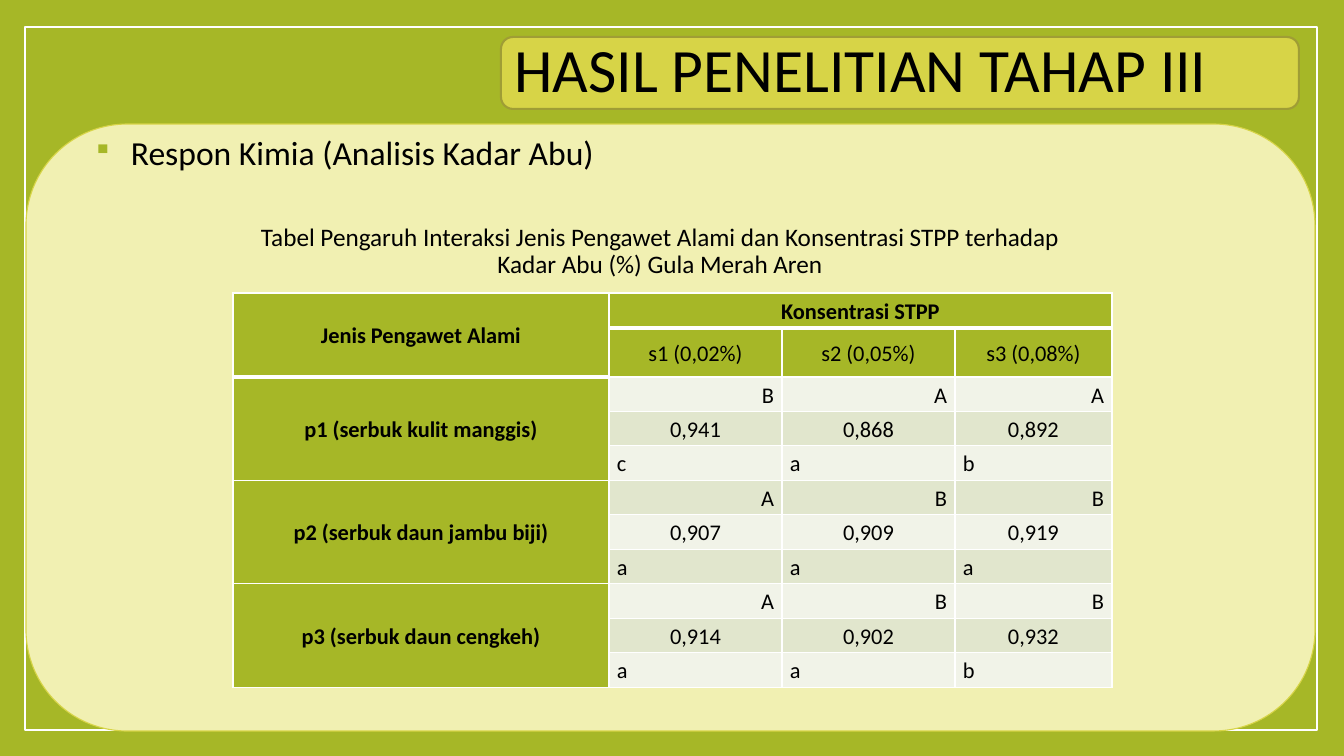
from lxml import etree
from pptx import Presentation
from pptx.dml.color import RGBColor
from pptx.enum.shapes import MSO_SHAPE
from pptx.enum.text import MSO_ANCHOR, PP_ALIGN
from pptx.oxml.ns import qn
from pptx.util import Pt

RECT, ROUND = MSO_SHAPE.RECTANGLE, MSO_SHAPE.ROUNDED_RECTANGLE
LEFT, MID, RIGHT = PP_ALIGN.LEFT, PP_ALIGN.CENTER, PP_ALIGN.RIGHT
JUST = PP_ALIGN.JUSTIFY
CENTRE = MSO_ANCHOR.MIDDLE
HUES = {
    "green": "A6B727", "cream": "F1F0B2", "gold": "D7D447", "olive": "9F9D35",
    "white": "FFFFFF", "black": "000000", "pale": "F1F3E8", "sage": "E1E6CD",
}
HEADS = ["s1 (0,02%)", "s2 (0,05%)", "s3 (0,08%)"]
GROUPS = [
    ("p1 (serbuk kulit manggis)", ["BAA", ["0,941", "0,868", "0,892"], "cab"]),
    ("p2 (serbuk daun jambu biji)", ["ABB", ["0,907", "0,909", "0,919"], "aaa"]),
    ("p3 (serbuk daun cengkeh)", ["ABB", ["0,914", "0,902", "0,932"], "aab"]),
]
COLS = [376, 173, 173, 157]
ROWS = [35, 49] + [35 - i % 2 for i in range(9)]


def px(n):
    return round(n * 914400 / 100.8)


def hue(name):
    return RGBColor.from_string(HUES[name])


class Deck:
    """Draws styled elements on the current slide."""

    def __init__(self, font):
        self.font = font
        self.prs = Presentation()
        self.prs.slide_width, self.prs.slide_height = px(1344), px(756)

    def page(self, fill):
        self.slide = self.prs.slides.add_slide(self.prs.slide_layouts[6])
        back = self.slide.background.fill
        back.solid()
        back.fore_color.rgb = hue(fill)

    def text(self, frame, words, size, align=LEFT, bold=False, space=0.9):
        para = frame.paragraphs[0]
        para.alignment, para.line_spacing = align, space
        run = para.add_run()
        run.text = words
        font = run.font
        font.name, font.size, font.bold = self.font, Pt(size), bold
        font.color.rgb = hue("black")
        return para

    def shape(self, kind, box, fill, line, width):
        item = self.slide.shapes.add_shape(kind, *map(px, box))
        item.shadow.inherit = False
        item.fill.solid()
        item.fill.fore_color.rgb = hue(fill)
        item.line.color.rgb = hue(line)
        item.line.width = Pt(width)
        return item

    def label(self, box, words, size, align=LEFT):
        frame = self.slide.shapes.add_textbox(*map(px, box)).text_frame
        frame.word_wrap = True
        return self.text(frame, words, size, align)

    def bullet(self, para, mark, color, scale, indent):
        props = para._p.get_or_add_pPr()
        props.set("marL", str(px(indent)))
        props.set("indent", str(-px(indent)))
        tint = etree.SubElement(props, qn("a:buClr"))
        etree.SubElement(tint, qn("a:srgbClr"), val=HUES[color])
        etree.SubElement(props, qn("a:buSzPct"), val=str(scale * 1000))
        etree.SubElement(props, qn("a:buChar"), char=mark)

    def table(self, left, top, cols, rows):
        box = map(px, (left, top, sum(cols), sum(rows)))
        grid = self.slide.shapes.add_table(len(rows), len(cols), *box).table
        for col, width in zip(grid.columns, cols):
            col.width = px(width)
        for row, height in zip(grid.rows, rows):
            row.height = px(height)
        return grid

    def cell(self, cell, fill, thick):
        props = cell._tc.get_or_add_tcPr()
        for side in "LRTB":
            width = Pt(3 if side in thick else 1)
            edge = etree.SubElement(props, qn("a:ln" + side), w=str(width))
            paint = etree.SubElement(edge, qn("a:solidFill"))
            etree.SubElement(paint, qn("a:srgbClr"), val=HUES["white"])
        cell.fill.solid()
        cell.fill.fore_color.rgb = hue(fill)
        cell.margin_left = cell.margin_right = px(8)
        cell.margin_top = cell.margin_bottom = 0
        cell.vertical_anchor = CENTRE

    def entry(self, cell, words, align=MID, bold=False):
        self.text(cell.text_frame, words, 16, align, bold, 1.07)


def main():
    deck = Deck("Calibri")
    deck.page("green")
    deck.shape(RECT, (25, 27, 1292, 703), "green", "white", 1)
    deck.shape(ROUND, (26, 124, 1289, 607), "cream", "gold", 0.79)
    topic = deck.label((83, 131, 530, 41), "Respon Kimia (Analisis Kadar Abu)", 24)
    deck.bullet(topic, "▪", "green", 80, 38)
    deck.label((233, 220, 854, 73),
               "Tabel Pengaruh Interaksi Jenis Pengawet Alami dan Konsentrasi "
               "STPP terhadap Kadar Abu (%) Gula Merah Aren", 18, MID)

    grid = deck.table(233, 293, COLS, ROWS)
    for r in range(len(ROWS)):
        for c in range(len(COLS)):
            head = r < 2 or c == 0
            band = "sage" if r % 2 else "pale"
            split = 1 if c else 2
            thick = "B" if r == 0 or r == split - 1 else "T" if r == split else ""
            deck.cell(grid.cell(r, c), "green" if head else band, thick)

    grid.cell(0, 0).merge(grid.cell(1, 0))
    grid.cell(0, 1).merge(grid.cell(0, 3))
    deck.entry(grid.cell(0, 0), "Jenis Pengawet Alami", bold=True)
    deck.entry(grid.cell(0, 1), "Konsentrasi STPP", bold=True)
    for c, words in enumerate(HEADS, 1):
        deck.entry(grid.cell(1, c), words)
    for g, (name, lines) in enumerate(GROUPS):
        top = 2 + 3 * g
        grid.cell(top, 0).merge(grid.cell(top + 2, 0))
        deck.entry(grid.cell(top, 0), name, bold=True)
        for r, (line, align) in enumerate(zip(lines, (RIGHT, MID, LEFT)), top):
            for c, words in enumerate(line, 1):
                deck.entry(grid.cell(r, c), words, align)

    title = deck.shape(ROUND, (501, 37, 798, 72), "gold", "olive", 1.5)
    title.text_frame.word_wrap = True
    title.text_frame.vertical_anchor = CENTRE
    deck.text(title.text_frame, "HASIL PENELITIAN TAHAP III", 44, JUST)
    deck.prs.save("out.pptx")


if __name__ == "__main__":
    main()
